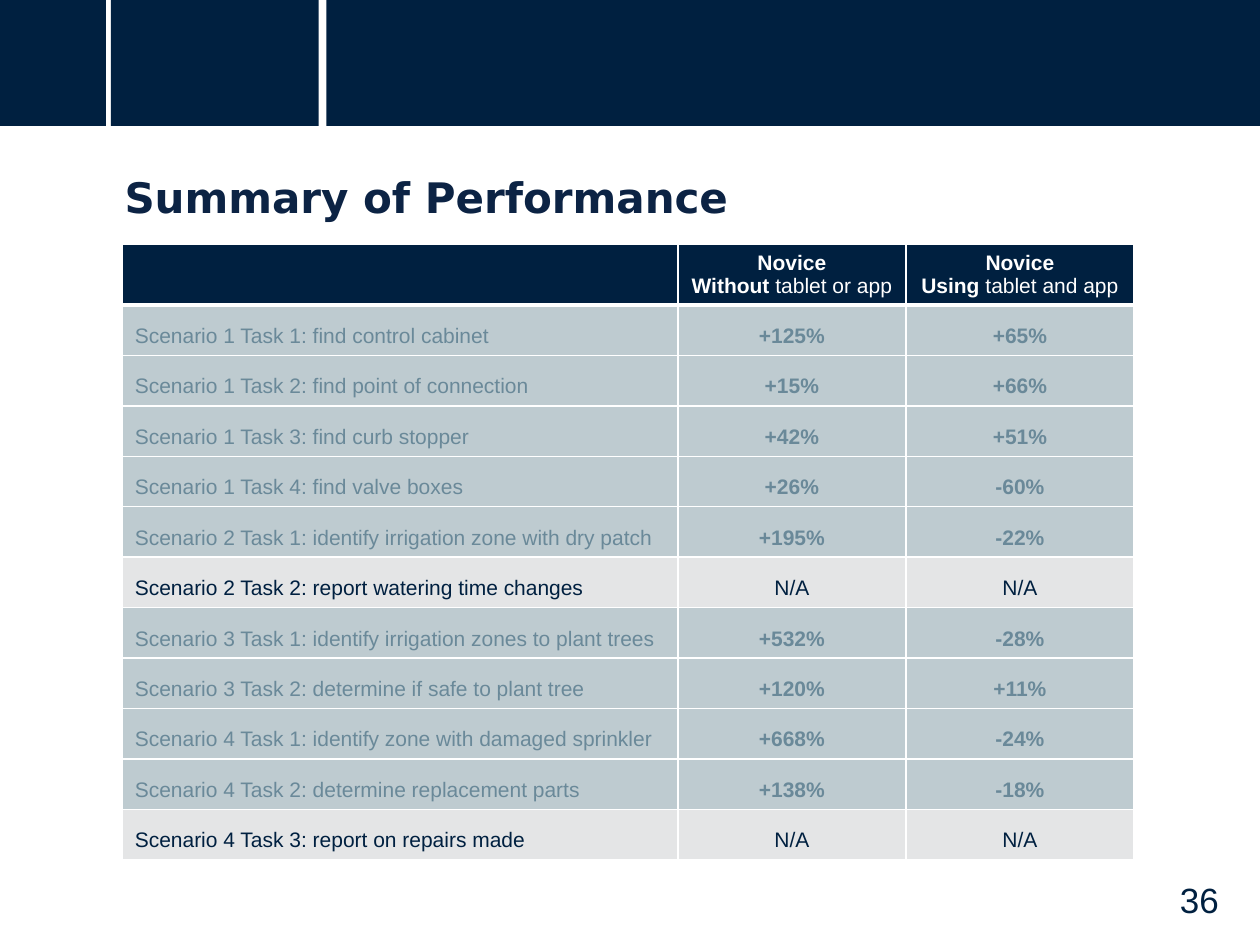
from lxml import etree
from pptx import Presentation
from pptx.dml.color import RGBColor
from pptx.enum.shapes import MSO_SHAPE
from pptx.enum.text import MSO_ANCHOR, PP_ALIGN
from pptx.oxml.ns import qn
from pptx.util import Inches, Pt

RECT = MSO_SHAPE.RECTANGLE
MIDDLE = MSO_ANCHOR.MIDDLE
LEFT, CENTER = PP_ALIGN.LEFT, PP_ALIGN.CENTER

COLORS = {
    "navy": "002040",
    "title": "0C2344",
    "white": "FFFFFF",
    "muted_text": "6A8999",
    "muted_fill": "BECBD0",
    "gray": "CBCCCE",
}
BODY_FONT, TITLE_FONT = "Arial", "DejaVu Sans"

BANNER = [(0, 0.84), (0.88, 1.65), (2.59, 7.5)]  # left, width
COLUMN_WIDTHS = [4.41, 1.81, 1.81]
HEADER_HEIGHT, ROW_HEIGHT = 0.47, 0.4
HEADERS = [("Without ", "tablet or app"), ("Using ", "tablet and app")]
RESULTS = [
    ("Scenario 1 Task 1: find control cabinet", "+125%", "+65%"),
    ("Scenario 1 Task 2: find point of connection", "+15%", "+66%"),
    ("Scenario 1 Task 3: find curb stopper", "+42%", "+51%"),
    ("Scenario 1 Task 4: find valve boxes", "+26%", "-60%"),
    ("Scenario 2 Task 1: identify irrigation zone with dry patch", "+195%", "-22%"),
    ("Scenario 2 Task 2: report watering time changes", "N/A", "N/A"),
    ("Scenario 3 Task 1: identify irrigation zones to plant trees", "+532%", "-28%"),
    ("Scenario 3 Task 2: determine if safe to plant tree", "+120%", "+11%"),
    ("Scenario 4 Task 1: identify zone with damaged sprinkler", "+668%", "-24%"),
    ("Scenario 4 Task 2: determine replacement parts", "+138%", "-18%"),
    ("Scenario 4 Task 3: report on repairs made", "N/A", "N/A"),
]


def rgb(name):
    return RGBColor.from_string(COLORS[name])


class SlideBuilder:
    def __init__(self, slide):
        self.s = slide

    def run(self, p, text, size, color, bold=False, font=BODY_FONT):
        r = p.add_run()
        r.text = text
        r.font.name = font
        r.font.size = Pt(size)
        r.font.bold = bold
        r.font.color.rgb = rgb(color)

    def block(self, left, top, width, height, color):
        sp = self.s.shapes.add_shape(
            RECT, Inches(left), Inches(top), Inches(width), Inches(height))
        sp.shadow.inherit = False
        sp.fill.solid()
        sp.fill.fore_color.rgb = rgb(color)
        sp.line.fill.background()

    def text(self, box, text, size, color, align=LEFT, wrap=True, **style):
        sp = self.s.shapes.add_textbox(*(Inches(v) for v in box))
        tf = sp.text_frame
        tf.word_wrap = wrap
        p = tf.paragraphs[0]
        p.alignment = align
        self.run(p, text, size, color, **style)

    def table(self, left, top, widths, heights):
        frame = self.s.shapes.add_table(
            len(heights), len(widths), Inches(left), Inches(top),
            Inches(sum(widths)), Inches(sum(heights)))
        table = frame.table
        table.first_row = table.horz_banding = False
        for column, width in zip(table.columns, widths):
            column.width = Inches(width)
        for row, height in zip(table.rows, heights):
            row.height = Inches(height)
        return table

    def cell(self, cell, fill, opacity=100, top=1, bottom=1, margin=0.05):
        """Set fill, white borders (top and bottom widths in points) and margins."""
        cell.vertical_anchor = MIDDLE
        cell.margin_top = cell.margin_bottom = Inches(margin)
        tc_pr = cell._tc.get_or_add_tcPr()
        for side, width in (("L", 1), ("R", 1), ("T", top), ("B", bottom)):
            ln = etree.SubElement(tc_pr, qn(f"a:ln{side}"), w=str(Pt(width)))
            solid = etree.SubElement(ln, qn("a:solidFill"))
            etree.SubElement(solid, qn("a:srgbClr"), val=COLORS["white"])
        cell.fill.solid()
        cell.fill.fore_color.rgb = rgb(fill)
        if opacity < 100:
            color = tc_pr.find(qn("a:solidFill")).find(qn("a:srgbClr"))
            etree.SubElement(color, qn("a:alpha"), val=str(opacity * 1000))

    def header_cell(self, cell, lines):
        """Fill a heading cell; each line is a list of (text, bold) runs."""
        self.cell(cell, "navy", bottom=3, margin=0.04)
        tf = cell.text_frame
        for i, line in enumerate(lines):
            p = tf.add_paragraph() if i else tf.paragraphs[0]
            p.alignment = CENTER
            for text, bold in line:
                self.run(p, text, 12, "white", bold)

    def result_row(self, cells, values, first):
        measured = values[1] != "N/A"
        fill, opacity = ("muted_fill", 100) if measured else ("gray", 50)
        color = "muted_text" if measured else "navy"
        for i, (cell, value) in enumerate(zip(cells, values)):
            self.cell(cell, fill, opacity, top=3 if first else 1)
            p = cell.text_frame.paragraphs[0]
            p.alignment = CENTER if i else LEFT
            p.line_spacing = 1.5
            self.run(p, value, 12, color, bold=measured and i > 0)


def main():
    prs = Presentation()
    prs.slide_width, prs.slide_height = Inches(10), Inches(7.5)
    b = SlideBuilder(prs.slides.add_slide(prs.slide_layouts[6]))

    for left, width in BANNER:
        b.block(left, 0, width, 1, "navy")
    b.text((9.25, 6.92, 0.54, 0.44), "36", 20, "navy", CENTER, wrap=False)
    b.text((0.89, 1.31, 8.27, 0.59), "Summary of Performance", 24, "title",
           bold=True, font=TITLE_FONT)

    heights = [HEADER_HEIGHT] + [ROW_HEIGHT] * len(RESULTS)
    table = b.table(0.97, 1.94, COLUMN_WIDTHS, heights)
    b.header_cell(table.cell(0, 0), [])
    for col, (condition, tools) in enumerate(HEADERS, 1):
        b.header_cell(table.cell(0, col),
                      [[("Novice", True)], [(condition, True), (tools, False)]])
    for row, values in enumerate(RESULTS, 1):
        b.result_row(table.rows[row].cells, values, first=row == 1)

    prs.save("out.pptx")


if __name__ == "__main__":
    main()
